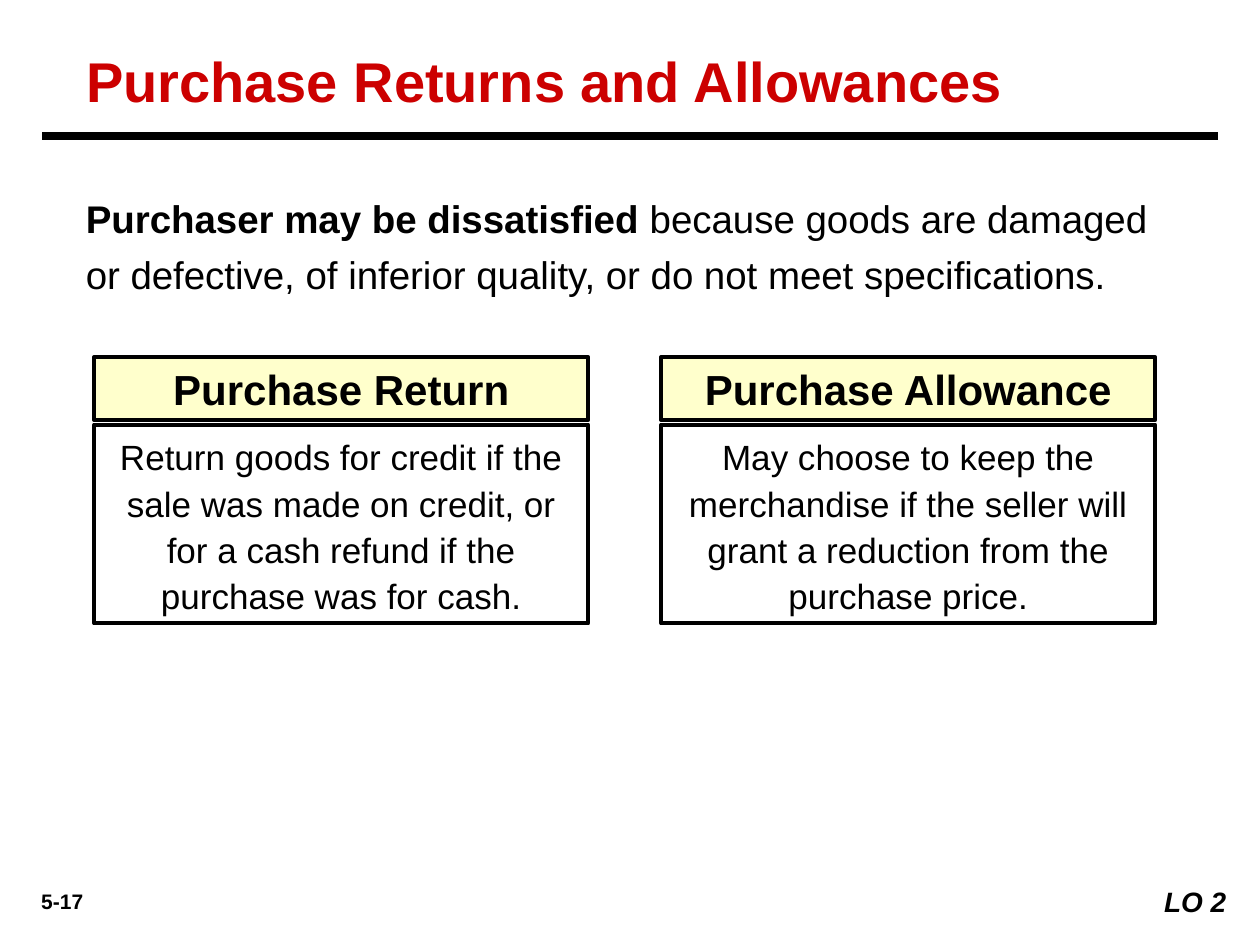
from lxml.etree import SubElement
from pptx import Presentation
from pptx.dml.color import RGBColor
from pptx.enum.shapes import MSO_CONNECTOR, MSO_SHAPE
from pptx.enum.text import MSO_ANCHOR, PP_ALIGN
from pptx.oxml.ns import qn
from pptx.util import Cm, Pt

COLORS = {"title": "CC0000", "ink": "000000", "head": "FFFFCC", "page": "FFFFFF"}
FONT = "Arial"

TITLE = "Purchase Returns and Allowances"
INTRO = [
    ("Purchaser may be dissatisfied", True),
    (" because goods are damaged or defective, of inferior quality, "
     "or do not meet specifications.", False),
]
CARDS = [
    ("Purchase Return",
     "Return goods for credit if the sale was made on credit, "
     "or for a cash refund if the purchase was for cash."),
    ("Purchase Allowance",
     "May choose to keep the merchandise if the seller will grant "
     "a reduction from the purchase price."),
]
PAGE = "5-17"
GOAL = "LO 2"

# Card grid, in centimetres
LEFT, STEP, WIDTH = 1.9, 11.43, 9.96
HEAD_TOP, HEAD_HIGH = 7.2, 1.27
BODY_TOP, BODY_HIGH = 8.56, 4.01


def color(name):
    return RGBColor.from_string(COLORS[name])


def write(shape, runs, size, align=PP_ALIGN.LEFT, ink="ink", spacing=1.0, italic=False):
    """Fill a shape with one paragraph made of (text, bold) runs."""
    frame = shape.text_frame
    frame.word_wrap = True
    frame.vertical_anchor = MSO_ANCHOR.MIDDLE
    para = frame.paragraphs[0]
    para.alignment = align
    para.line_spacing = spacing
    for text, bold in runs:
        run = para.add_run()
        run.text = text
        font = run.font
        font.name, font.size = FONT, Pt(size)
        font.bold, font.italic = bold, italic
        font.color.rgb = color(ink)


def add_text(slide, box):
    return slide.shapes.add_textbox(*map(Cm, box))


def add_box(slide, box, fill=None, border=True):
    shape = slide.shapes.add_shape(MSO_SHAPE.RECTANGLE, *map(Cm, box))
    shape.shadow.inherit = False
    if fill:
        shape.fill.solid()
        shape.fill.fore_color.rgb = color(fill)
    else:
        shape.fill.background()
    if border:
        shape.line.color.rgb = color("ink")
        shape.line.width = Pt(2.25)
    else:
        shape.line.fill.background()
    return shape


def add_rule(slide, left, right, top):
    rule = slide.shapes.add_connector(
        MSO_CONNECTOR.STRAIGHT, Cm(left), Cm(top), Cm(right), Cm(top))
    rule.line.color.rgb = color("ink")
    rule.line.width = Pt(4.5)
    SubElement(rule._element.spPr, qn("a:effectLst"))


def main():
    deck = Presentation()
    deck.slide_width, deck.slide_height = Cm(25.4), Cm(19.05)
    slide = deck.slides.add_slide(deck.slide_layouts[5])

    title = slide.shapes.title
    title.left, title.top, title.width, title.height = map(Cm, (1.48, 0.85, 21.17, 1.55))
    write(title, [(TITLE, True)], 32, ink="title")
    add_rule(slide, 0.85, 24.55, 2.75)

    write(add_text(slide, (1.48, 3.61, 22.65, 2.51)), INTRO, 22, spacing=1.2)

    for i, (head, body) in enumerate(CARDS):
        left = LEFT + i * STEP
        write(add_box(slide, (left, BODY_TOP, WIDTH, BODY_HIGH)),
              [(body, False)], 20, PP_ALIGN.CENTER, spacing=1.1)
        write(add_box(slide, (left, HEAD_TOP, WIDTH, HEAD_HIGH), "head"),
              [(head, True)], 24, PP_ALIGN.CENTER)

    write(add_text(slide, (0.2, 17.78, 2.11, 0.76)), [(PAGE, True)], 12, PP_ALIGN.CENTER)
    write(add_box(slide, (22.86, 17.7, 2.11, 0.94), "page", border=False),
          [(GOAL, True)], 16, PP_ALIGN.RIGHT, italic=True)

    deck.save("out.pptx")


if __name__ == "__main__":
    main()
